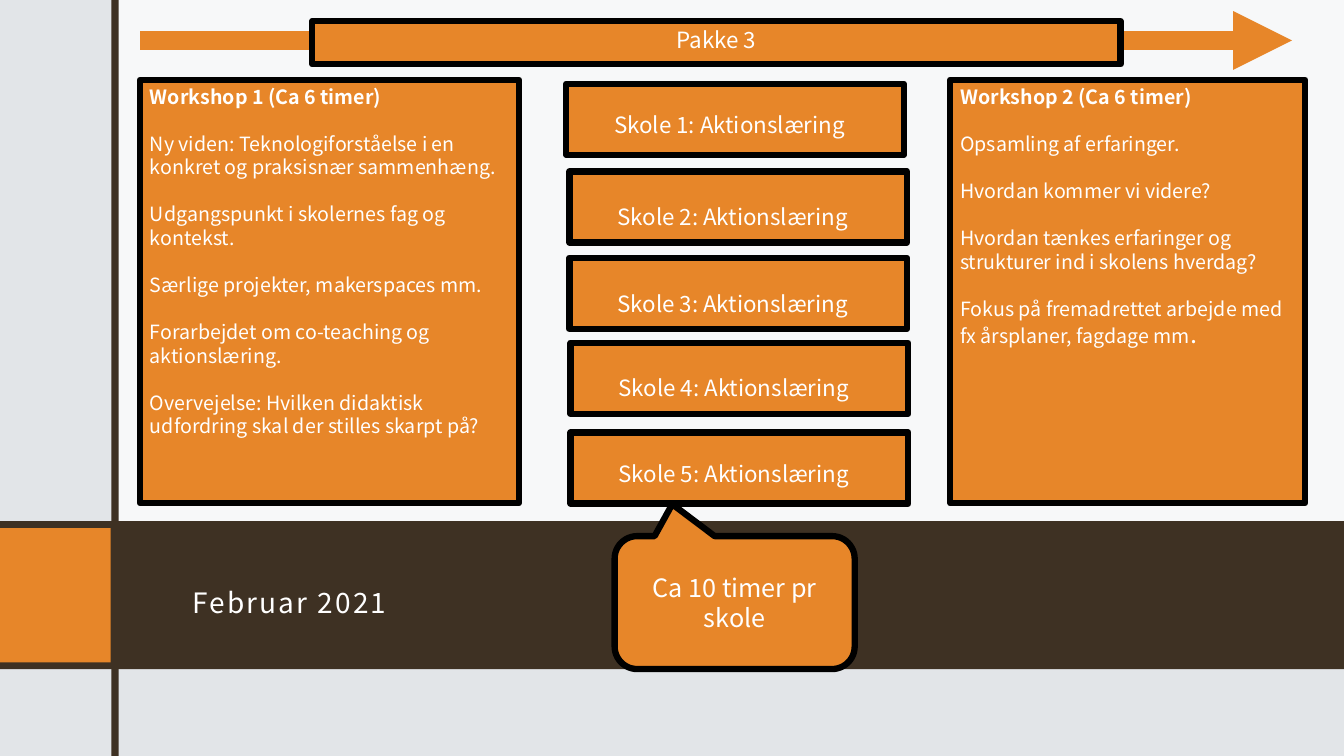
from lxml import etree
from pptx import Presentation, util as u
from pptx.dml.color import RGBColor
from pptx.enum import shapes, text
from pptx.oxml.ns import qn

ORANGE, BROWN, WHITE, BLACK = "E78629", "3E3123", "FFFFFF", "000000"


def paint(item, tint):
    item.solid()
    item.fore_color.rgb = RGBColor.from_string(tint)


class Board:
    """Hold the slide and its style, and draw each kind of element."""

    font = "Noto Sans CJK JP"
    edge = u.Pt(4.5)
    lead = 1.2

    def __init__(self, slide):
        self.slide = slide
        paint(slide.background.fill, "E2E5E8")

    def shape(self, area, tint, kind=shapes.MSO_SHAPE.RECTANGLE):
        item = self.slide.shapes.add_shape(kind, *map(u.Cm, area))
        item.shadow.inherit = False
        paint(item.fill, tint)
        item.line.fill.background()
        return item

    def veil(self, area, tint, alpha):
        item = self.shape(area, tint)
        color = item.fill._xPr.find(".//" + qn("a:srgbClr"))
        etree.SubElement(color, qn("a:alpha"), val=str(alpha * 1000))

    def box(self, area, kind=shapes.MSO_SHAPE.RECTANGLE):
        item = self.shape(area, ORANGE, kind)
        paint(item.line.fill, BLACK)
        item.line.width = self.edge
        item.text_frame.word_wrap = True
        item.text_frame.vertical_anchor = text.MSO_ANCHOR.TOP
        return item

    def style(self, para, size, bold=False, align=text.PP_ALIGN.LEFT):
        para.alignment = align
        para.line_spacing = u.Pt(round(size * self.lead, 1))
        para.font.size = u.Pt(size)
        para.font.name = self.font
        para.font.bold = bold
        para.font.color.rgb = RGBColor.from_string(WHITE)

    def label(self, area, words, size, kind=shapes.MSO_SHAPE.RECTANGLE):
        item = self.box(area, kind)
        para = item.text_frame.paragraphs[0]
        para.text = words
        self.style(para, size, align=text.PP_ALIGN.CENTER)
        return item

    def panel(self, area, head, lines):
        frame = self.box(area).text_frame
        for spot, words in enumerate([head] + lines):
            para = frame.add_paragraph() if spot else frame.paragraphs[0]
            para.add_run().text = words
            self.style(para, 14, bold=not spot)
            para.space_before = u.Pt(16.8 if spot else 0)
        return frame

    def school(self, left, top, drop, words):
        frame = self.label((left, top, 8.51, 1.79), words, 16).text_frame
        frame.margin_top = u.Cm(drop)
        frame.margin_right = u.Cm(0.53)
        frame.margin_bottom = 0

    def callout(self, area, words, points):
        kind = shapes.MSO_SHAPE.ROUNDED_RECTANGULAR_CALLOUT
        item = self.label(area, words, 18, kind)
        item.text_frame.vertical_anchor = text.MSO_ANCHOR.MIDDLE
        for spot, value in enumerate(points):
            item.adjustments[spot] = value

    def arrow(self, start, end, level):
        item = self.slide.shapes.add_connector(
            shapes.MSO_CONNECTOR.STRAIGHT, *map(u.Cm, (start, level, end, level)))
        paint(item.line.fill, ORANGE)
        item.line.width = u.Pt(14)
        etree.SubElement(item.line._get_or_add_ln(), qn("a:tailEnd"), type="triangle")
        etree.SubElement(item._element.spPr, qn("a:effectLst"))

    def date(self, area, words):
        head, item = self.slide.placeholders
        tree = head._element.getparent()
        tree.remove(head._element)
        tree.append(item._element)
        item.left, item.top, item.width, item.height = map(u.Cm, area)
        frame = item.text_frame
        frame.margin_left = u.Cm(0.3)
        frame.vertical_anchor = text.MSO_ANCHOR.MIDDLE
        para = frame.paragraphs[0]
        run = para.add_run()
        run.text = words
        self.style(para, 20)
        para.space_before = u.Pt(0)
        run._r.get_or_add_rPr().set("spc", "150")


def main():
    deck = Presentation()
    deck.slide_width, deck.slide_height = u.Cm(33.87), u.Cm(19.05)
    board = Board(deck.slides.add_slide(deck.slide_layouts[0]))

    board.veil((2.9, 0, 30.97, 13.13), WHITE, 75)
    board.shape((0, 13.13, 33.87, 3.73), BROWN)
    board.date((4.55, 14.07, 14.53, 2.21), "Februar 2021")
    board.shape((0, 13.31, 2.79, 3.38), ORANGE)
    board.shape((2.81, 0, 0.18, 19.05), BROWN)
    board.arrow(3.53, 32.56, 1.02)

    board.panel((3.53, 2.01, 9.55, 10.67), "Workshop 1 (Ca 6 timer)", [
        "Ny viden: Teknologiforståelse i en konkret og praksisnær sammenhæng.",
        "Udgangspunkt i skolernes fag og kontekst.",
        "Særlige projekter, makerspaces mm.",
        "Forarbejdet om co-teaching og aktionslæring.",
        "Overvejelse: Hvilken didaktisk udfordring skal der stilles skarpt på?",
    ])
    frame = board.panel((23.95, 2.01, 8.94, 10.67), "Workshop 2 (Ca 6 timer)", [
        "Opsamling af erfaringer.",
        "Hvordan kommer vi videre?",
        "Hvordan tænkes erfaringer og strukturer ind i skolens hverdag?",
        "Fokus på fremadrettet arbejde med fx årsplaner, fagdage mm",
    ])
    last = frame.paragraphs[-1]
    last.line_spacing, last.space_before = u.Pt(20.7), u.Pt(12.9)
    stop = last.add_run()
    stop.text = "."
    stop.font.size = u.Pt(18)

    places = [(14.27, 2.11, 0.7), (14.35, 4.32, 0.8), (14.35, 6.5, 0.8),
              (14.38, 8.64, 0.8), (14.38, 10.9, 0.7)]
    for number, place in enumerate(places, 1):
        board.school(*place, f"Skole {number}: Aktionslæring")

    board.callout((15.49, 13.51, 6.05, 3.35), "Ca 10 timer pr skole",
                  (-0.26, -0.74, 0.17))
    board.label((7.87, 0.53, 20.37, 1.09), "Pakke 3", 16)
    deck.save("out.pptx")


if __name__ == "__main__":
    main()
